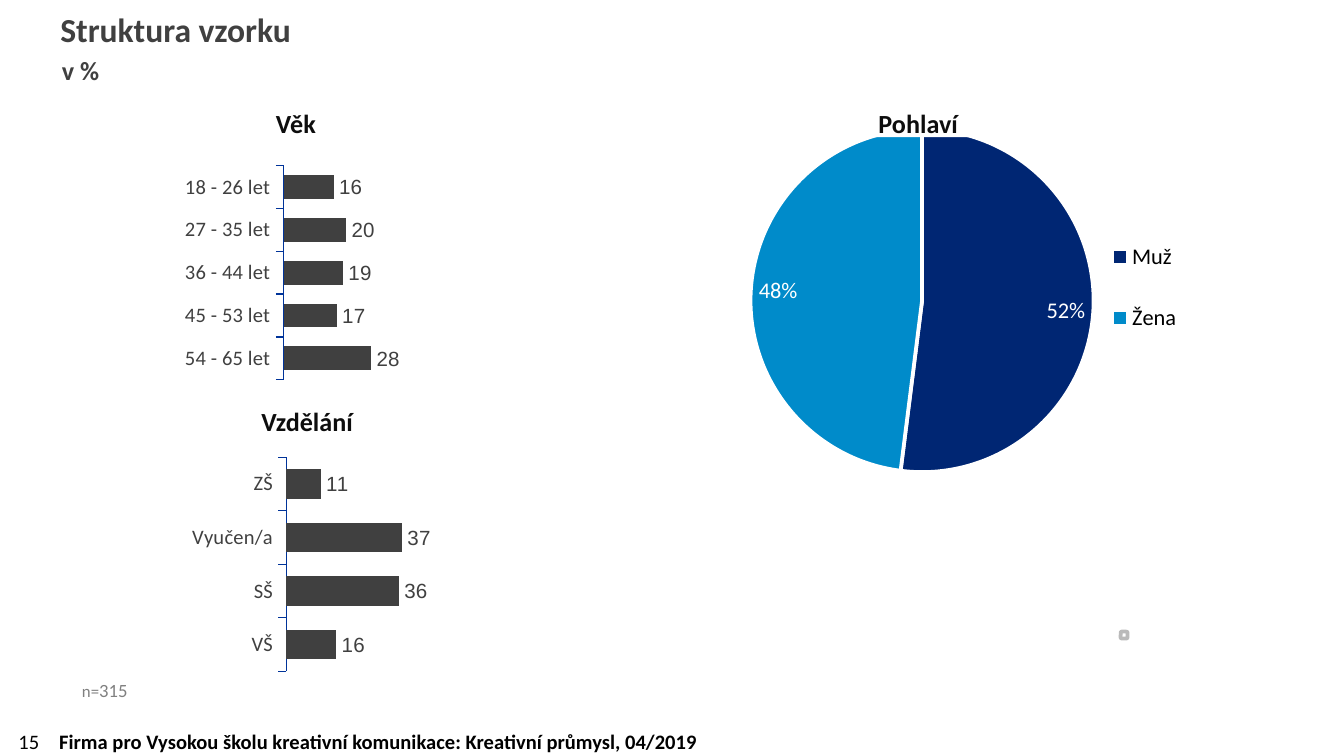
from lxml import etree
from pptx import Presentation
from pptx.chart.data import CategoryChartData
from pptx.dml.color import RGBColor
from pptx.enum.chart import XL_CHART_TYPE, XL_LABEL_POSITION, XL_LEGEND_POSITION, XL_TICK_MARK
from pptx.enum.shapes import MSO_SHAPE
from pptx.enum.text import MSO_ANCHOR, PP_ALIGN
from pptx.oxml.ns import qn
from pptx.util import Cm, Pt

PIE, BAR = XL_CHART_TYPE.PIE, XL_CHART_TYPE.BAR_CLUSTERED
TOP, MIDDLE = MSO_ANCHOR.TOP, MSO_ANCHOR.MIDDLE
LEFT, CENTER = PP_ALIGN.LEFT, PP_ALIGN.CENTER
ROUNDED = MSO_SHAPE.ROUNDED_RECTANGLE

FONT = "Calibri"
COLORS = {
    "text": "404040", "heading": "0D0D0D", "black": "000000", "note": "808080",
    "white": "FFFFFF", "mark": "BABABA", "axis": "003399", "bar": "404040",
    "male": "002673", "female": "008BCA",
}

# Positions are left, top, width, height in centimetres.
TITLE = ("Struktura vzorku", (1.04, 0.03, 22.86, 1.3))
# position, insets (horizontal, vertical), anchor, wrap, runs (text, size, colour, bold)
TEXTS = [
    ((0.1, 13.64, 5.92, 0.76), (0.25, 0.13), MIDDLE, True, [("15", 11, "black", False)]),
    ((1.17, 1.02, 1.6, 0.5), (0, 0), TOP, True, [("v %", 14, "text", True)]),
    ((1.3, 12.7, 1.4, 0.69), (0.25, 0.13), TOP, False,
     [("n=", 9, "note", False), ("315", 10, "note", False)]),
    ((1.12, 13.69, 14.22, 0.64), (0, 0.13), MIDDLE, True,
     [("Firma pro Vysokou školu kreativní komunikace: Kreativní průmysl, 04/2019",
       11, "black", True)]),
]
MARK = (21.18, 11.94, 0.13, 0.13)
HEADING_SIZE = (6.93, 0.48)
HEADINGS = [("Věk", 2.13, 2.08), ("Pohlaví", 13.89, 2.08), ("Vzdělání", 2.34, 7.72)]
GENDER = [("Muž", 52, "male"), ("Žena", 48, "female")]
GENDER_BOX = (13.41, 2.08, 9.68, 7.21)
BAR_SIZE = (11.38, 4.6)
BAR_CHARTS = [
    ((-0.1, 2.95), [("18 - 26 let", 16), ("27 - 35 let", 20), ("36 - 44 let", 19),
                    ("45 - 53 let", 17), ("54 - 65 let", 28)]),
    ((-0.05, 8.46), [("ZŠ", 11), ("Vyučen/a", 37), ("SŠ", 36), ("VŠ", 16)]),
]


def color(name):
    return RGBColor.from_string(COLORS[name])


def lengths(values):
    return [Cm(value) for value in values]


def style_font(font, size, color_name, bold=False, name=FONT):
    font.name, font.size, font.bold = name, Pt(size), bold
    font.color.rgb = color(color_name)


def fill_text(frame, runs, insets, anchor, alignment=LEFT, wrap=True):
    frame.word_wrap = wrap
    frame.vertical_anchor = anchor
    frame.margin_left = frame.margin_right = Cm(insets[0])
    frame.margin_top = frame.margin_bottom = Cm(insets[1])
    paragraph = frame.paragraphs[0]
    paragraph.alignment = alignment
    for text, size, color_name, bold in runs:
        run = paragraph.add_run()
        run.text = text
        style_font(run.font, size, color_name, bold)


def add_rounded(slide, box, line_name, fill_name=None):
    shape = slide.shapes.add_shape(ROUNDED, *lengths(box))
    shape.shadow.inherit = False
    if fill_name:
        shape.fill.solid()
        shape.fill.fore_color.rgb = color(fill_name)
    else:
        shape.fill.background()
    shape.line.color.rgb = color(line_name)
    shape.line.width = Pt(2)
    return shape


def set_layout(parent, index, fractions, inner=False):
    """Place a plot area or legend at x, y, w, h as fractions of the chart."""
    for old in parent.findall(qn("c:layout")):
        parent.remove(old)
    layout = etree.Element(qn("c:layout"))
    manual = etree.SubElement(layout, qn("c:manualLayout"))
    settings = [("layoutTarget", "inner")] if inner else []
    settings += [("xMode", "edge"), ("yMode", "edge")]
    settings += list(zip("xywh", fractions))
    for tag, value in settings:
        etree.SubElement(manual, qn(f"c:{tag}")).set("val", str(value))
    parent.insert(index, layout)


def add_chart(slide, kind, box, rows, plot_fractions):
    data = CategoryChartData()
    data.categories = [row[0] for row in rows]
    data.add_series("Series 1", [row[1] for row in rows])
    chart = slide.shapes.add_chart(kind, *lengths(box), data).chart
    chart.has_title = False
    chart.has_legend = False
    style_font(chart.font, 12, "axis")
    set_layout(chart._chartSpace.find(".//" + qn("c:plotArea")), 0, plot_fractions, True)
    return chart


def add_gender_pie(slide):
    chart = add_chart(slide, PIE, GENDER_BOX, GENDER, (0.08, 0.05, 0.67, 0.9))
    plot = chart.plots[0]
    for index, (_, _, color_name) in enumerate(GENDER):
        slice_format = plot.series[0].points[index].format
        slice_format.fill.solid()
        slice_format.fill.fore_color.rgb = color(color_name)
        slice_format.line.color.rgb = color("white")
        slice_format.line.width = Pt(2)
    labels = plot.series[0].data_labels
    labels.show_value = False
    labels.show_percentage = True
    labels.number_format, labels.number_format_is_linked = "0%", False
    labels.position = XL_LABEL_POSITION.INSIDE_END
    style_font(labels.font, 12, "white")
    chart.has_legend = True
    chart.legend.position = XL_LEGEND_POSITION.RIGHT
    chart.legend.include_in_layout = False
    style_font(chart.legend.font, 12, "black")
    set_layout(chart._chartSpace.find(".//" + qn("c:legend")), 1, (0.76, 0.26, 0.18, 0.41))


def add_bar_chart(slide, corner, rows):
    chart = add_chart(slide, BAR, corner + BAR_SIZE, rows, (0.48, 0.04, 0.52, 0.88))
    plot = chart.plots[0]
    plot.gap_width = 80
    plot.vary_by_categories = False
    series = plot.series[0]
    series.format.fill.solid()
    series.format.fill.fore_color.rgb = color("bar")
    labels = series.data_labels
    labels.show_value = True
    labels.number_format, labels.number_format_is_linked = "#,##0", False
    labels.position = XL_LABEL_POSITION.OUTSIDE_END
    style_font(labels.font, 11, "text", name="Arial")
    categories, values = chart.category_axis, chart.value_axis
    categories.reverse_order = True
    categories.has_major_gridlines = False
    categories.major_tick_mark = XL_TICK_MARK.OUTSIDE
    categories.minor_tick_mark = XL_TICK_MARK.NONE
    categories.format.line.color.rgb = color("axis")
    categories.format.line.width = Pt(0.75)
    style_font(categories.tick_labels.font, 11, "text")
    values.minimum_scale, values.maximum_scale, values.major_unit = 0, 100, 20
    values.has_major_gridlines = False
    values.visible = False


def main():
    presentation = Presentation()
    presentation.slide_width, presentation.slide_height = Cm(25.4), Cm(14.29)
    slide = presentation.slides.add_slide(presentation.slide_layouts[5])
    title = slide.shapes.title
    text, box = TITLE
    title.left, title.top, title.width, title.height = lengths(box)
    fill_text(title.text_frame, [(text, 18, "text", True)], (0.1, 0.13), TOP)
    for box, insets, anchor, wrap, runs in TEXTS:
        text_box = slide.shapes.add_textbox(*lengths(box))
        fill_text(text_box.text_frame, runs, insets, anchor, wrap=wrap)
    add_rounded(slide, MARK, "mark")
    add_gender_pie(slide)
    for text, left, top in HEADINGS:
        heading = add_rounded(slide, (left, top) + HEADING_SIZE, "white", "white")
        fill_text(heading.text_frame, [(text, 14, "heading", True)], (0.25, 0.13), MIDDLE, CENTER)
    for corner, rows in BAR_CHARTS:
        add_bar_chart(slide, corner, rows)
    presentation.save("out.pptx")


if __name__ == "__main__":
    main()
